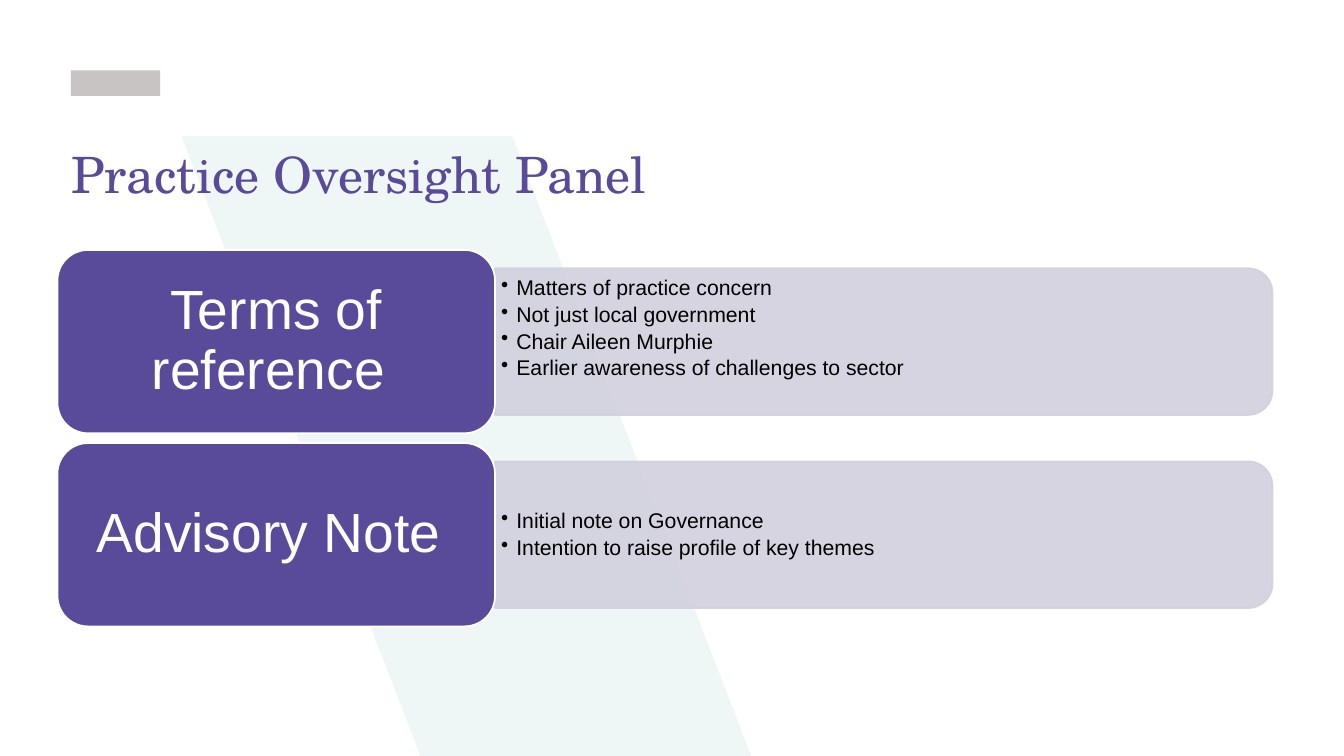
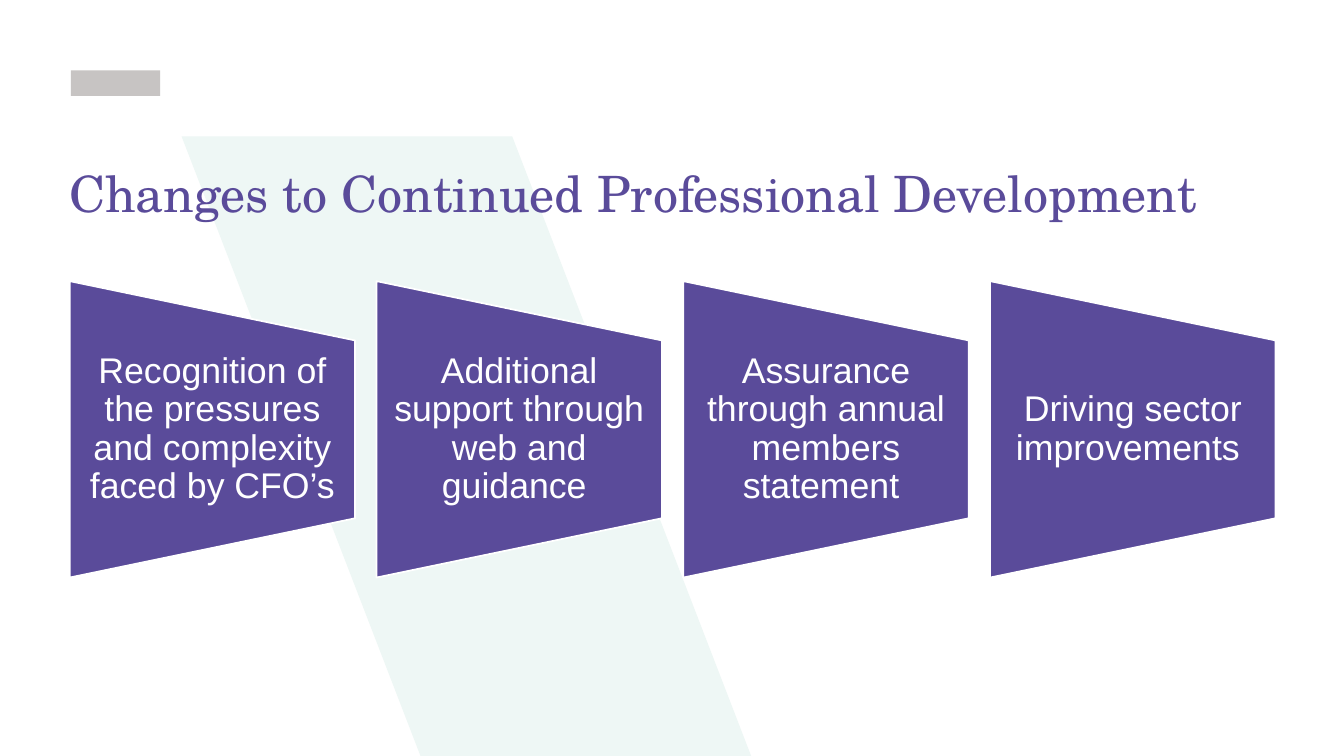
from lxml.etree import SubElement
from pptx import Presentation
from pptx.dml.color import RGBColor
from pptx.enum.shapes import MSO_SHAPE
from pptx.enum.text import MSO_ANCHOR, PP_ALIGN
from pptx.oxml.ns import qn
from pptx.util import Inches, Pt

PURPLE = RGBColor(0x5A, 0x4B, 0x9A)
LILAC = RGBColor(0xD2, 0xD0, 0xDE)
MINT = RGBColor(0xEE, 0xF7, 0xF5)
GREY = RGBColor(0xC7, 0xC4, 0xC3)
WHITE = RGBColor(0xFF, 0xFF, 0xFF)
BLACK = RGBColor(0x00, 0x00, 0x00)


class Deck:
    title_font = "TeX Gyre Schola"
    body_font = "Arial"

    def __init__(self):
        self.deck = Presentation()
        self.deck.slide_width = Inches(21.99)
        self.deck.slide_height = Inches(12.37)
        self.page = None

    def add_page(self, title, left, top, width):
        self.page = self.deck.slides.add_slide(self.deck.slide_layouts[6])
        self.shape(MSO_SHAPE.RECTANGLE, 1.16, 1.15, 1.46, 0.42, GREY)
        self.slanted_band()
        frame = self.text_box(left, top, width, 0.99, (0, 0, 0, 0), MSO_ANCHOR.TOP)
        self.set_text(frame, [title], self.title_font, 59, PURPLE)

    def slanted_band(self):
        builder = self.page.shapes.build_freeform(Inches(8.38), Inches(2.23))
        corners = [(2.97, 2.23), (6.88, 12.37), (12.29, 12.37)]
        builder.add_line_segments([(Inches(x), Inches(y)) for x, y in corners])
        self.paint(builder.convert_to_shape(), MINT)

    def paint(self, shape, fill, line=None, opacity=None):
        shape.shadow.inherit = False
        shape.fill.solid()
        shape.fill.fore_color.rgb = fill
        if line is None:
            shape.line.fill.background()
        else:
            shape.line.color.rgb = line
            shape.line.width = Pt(2)
        if opacity is not None:
            for color in shape.element.spPr.iter(qn("a:srgbClr")):
                SubElement(color, qn("a:alpha"), val=str(opacity * 1000))

    def shape(self, kind, left, top, width, height, fill, line=None, opacity=None):
        shape = self.page.shapes.add_shape(
            kind, Inches(left), Inches(top), Inches(width), Inches(height))
        self.paint(shape, fill, line, opacity)
        return shape

    def turned_shape(self, kind, left, top, width, height, angle, *style):
        shift = (width - height) / 2
        shape = self.shape(kind, left + shift, top - shift, height, width, *style)
        shape.rotation = angle

    def frame(self, shape, insets, anchor):
        frame = shape.text_frame
        frame.word_wrap = True
        frame.vertical_anchor = anchor
        (frame.margin_left, frame.margin_top,
         frame.margin_right, frame.margin_bottom) = map(Inches, insets)
        return frame

    def text_box(self, left, top, width, height, insets, anchor=MSO_ANCHOR.MIDDLE):
        box = self.page.shapes.add_textbox(
            Inches(left), Inches(top), Inches(width), Inches(height))
        return self.frame(box, insets, anchor)

    def set_text(self, frame, lines, font, size, color,
                 align=PP_ALIGN.LEFT, spacing=1.0, after=0):
        for index, line in enumerate(lines):
            para = frame.add_paragraph() if index else frame.paragraphs[0]
            para.text = line
            para.alignment = align
            para.line_spacing = spacing
            para.space_after = Pt(after)
            para.font.name = font
            para.font.size = Pt(size)
            para.font.color.rgb = color

    def label(self, frame, text, size):
        self.set_text(frame, [text], self.body_font, size, WHITE, PP_ALIGN.CENTER, 0.9)

    def bullets(self, left, top, width, height, lines, bottom_inset):
        frame = self.text_box(left, top, width, height, (0.1, 0.05, 0.1, bottom_inset))
        self.set_text(frame, lines, self.body_font, 25, BLACK, spacing=0.9, after=4.5)
        for para in frame.paragraphs:
            properties = para._p.get_or_add_pPr()
            properties.set("marL", str(Inches(0.25)))
            properties.set("indent", str(Inches(-0.25)))
            bullet = properties.makeelement(qn("a:buChar"), {"char": "•"})
            properties.insert_element_before(bullet, "a:tabLst", "a:defRPr", "a:extLst")

    def topic_row(self, top, heading, lines, bottom_inset=0.05):
        self.turned_shape(MSO_SHAPE.ROUND_2_SAME_RECTANGLE, 8.1, top + 0.3,
                          12.72, 2.4, 90, LILAC, LILAC, 90)
        self.bullets(8.1, top + 0.42, 12.61, 2.17, lines, bottom_inset)
        tile = self.shape(MSO_SHAPE.ROUNDED_RECTANGLE, 0.94, top, 7.16, 3, PURPLE, WHITE)
        frame = self.frame(tile, (0.27, 0.14, 0.27, 0.14), MSO_ANCHOR.MIDDLE)
        self.label(frame, heading, 65)

    def trapezoid(self, left, text):
        self.turned_shape(MSO_SHAPE.FLOWCHART_MANUAL_OPERATION, left, 4.6,
                          4.67, 4.85, 270, PURPLE, WHITE)
        self.label(self.text_box(left, 5.57, 4.67, 2.91, (0.29, 0, 0.29, 0)), text, 42)


def main():
    deck = Deck()

    deck.add_page("Practice Oversight Panel", 1.17, 2.34, 15.28)
    deck.topic_row(4.09, "Terms of reference ", [
        "Matters of practice concern",
        "Not just local government",
        "Chair Aileen Murphie",
        "Earlier awareness of challenges to sector",
    ], bottom_inset=0.48)
    deck.topic_row(7.25, "Advisory Note ", [
        "Initial note on Governance",
        "Intention to raise profile of key themes",
    ])

    deck.add_page("Changes to Continued Professional Development", 1.13, 2.65, 19.14)
    changes = [
        "Recognition of the pressures and complexity faced by CFO’s ",
        "Additional support through web and guidance ",
        "Assurance through annual members statement ",
        "Driving sector improvements ",
    ]
    for index, change in enumerate(changes):
        deck.trapezoid(1.14 + 5.02 * index, change)

    deck.deck.save("out.pptx")


if __name__ == "__main__":
    main()
